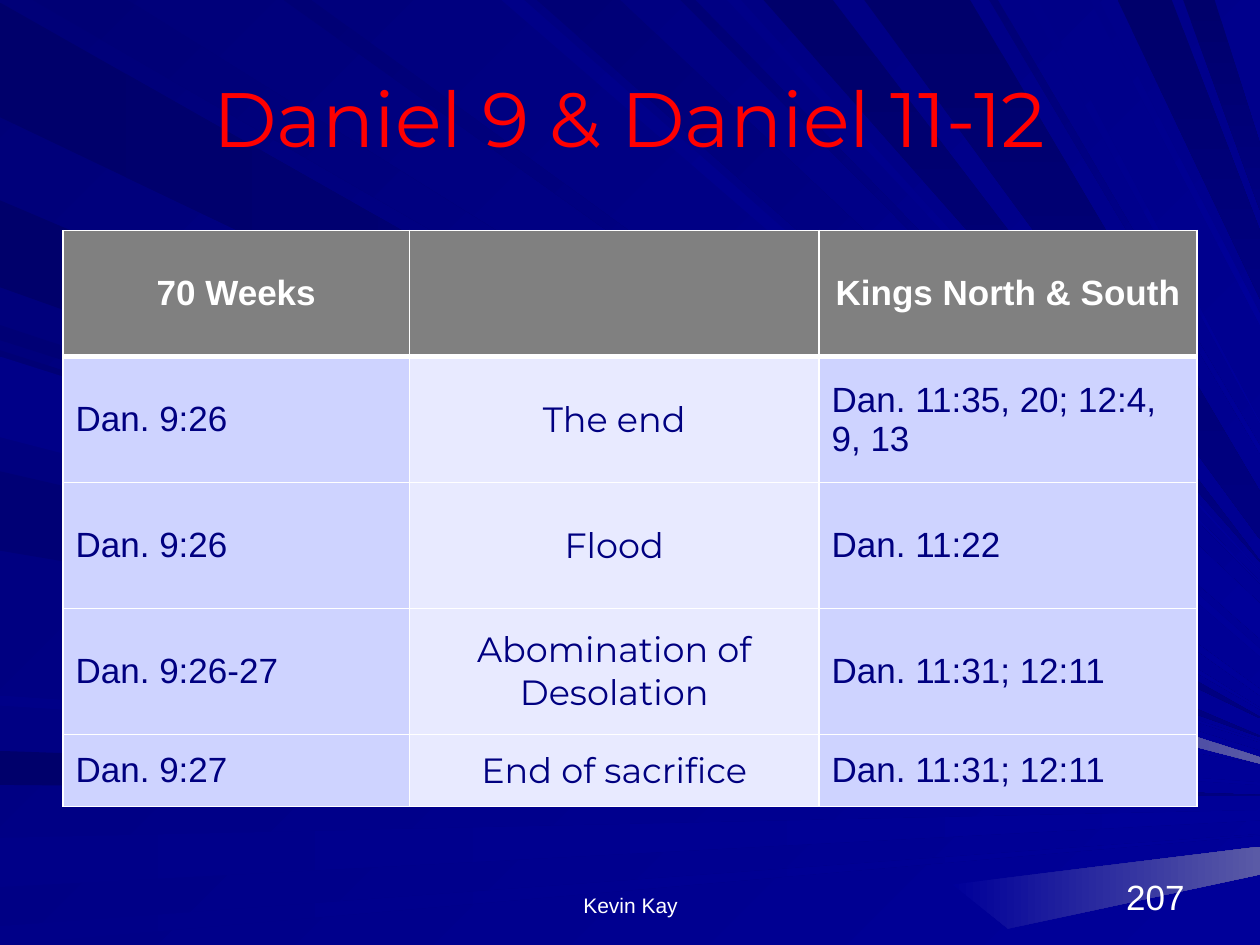
import pptx
import pptx.dml.color
import pptx.enum.text
import pptx.oxml
import pptx.oxml.ns
import pptx.util
from pptx.util import Inches

ALIGN = pptx.enum.text.PP_ALIGN
ANCHOR = pptx.enum.text.MSO_ANCHOR


def rgb(value):
    return pptx.dml.color.RGBColor.from_string(value)


def paint(fill, colors, angle):
    """Fill with a two-colour gradient turned clockwise by angle."""
    fill.gradient()
    fill.gradient_angle = (360 - angle) % 360
    for stop, color in zip(fill.gradient_stops, colors):
        stop.color.rgb = rgb(color)


deck = pptx.Presentation()
deck.slide_width, deck.slide_height = Inches(10), Inches(7.5)
page = deck.slides.add_slide(deck.slide_layouts[6])
paint(page.background.fill, ["000078", "000099"], 45)

# Light rays run from the left or top edge to the right edge, back to front:
# edge, shade, start and end along that edge, top and bottom at the right
shades = {
    "dark": ["00006B", "000080"],
    "middle": ["000075", "000099"],
    "bright": ["000088", "000099"],
    "glow": ["000099", "5A5AA6"],
}
rays = [
    ("left", "dark", 0.02, 0.93, 5.69, 5.7),
    ("top", "middle", 0.26, 1.01, 5.62, 5.63),
    ("left", "dark", 5.96, 6.23, 6.31, 6.32),
    ("left", "bright", 6.65, 7.04, 6.43, 6.51),
    ("left", "bright", 7.35, 7.5, 6.62, 6.63),
    ("left", "middle", 2.58, 2.7, 5.88, 5.89),
    ("left", "dark", 1.59, 2.28, 5.84, 5.85),
    ("top", "bright", 3.98, 4.16, 5.15, 5.21),
    ("top", "middle", 4.26, 4.92, 4.79, 5.07),
    ("top", "middle", 5.4, 5.52, 4.62, 4.63),
    ("top", "dark", 6.06, 6.61, 4.45, 4.46),
    ("top", "dark", 8.87, 9.3, 1.83, 2.37),
    ("top", "dark", 9.39, 9.64, 1.14, 1.67),
    ("left", "middle", 2.78, 3.42, 5.96, 6.02),
    ("left", "middle", 3.74, 4.37, 6.05, 6.06),
    ("left", "bright", 5.52, 5.6, 6.21, 6.23),
    ("top", "middle", 2.25, 2.47, 5.47, 5.52),
    ("top", "bright", 5.77, 5.88, 4.53, 4.54),
    ("top", "dark", 6.86, 7.7, 3.9, 4.28),
    ("top", "middle", 7.85, 7.92, 3.54, 3.6),
    ("top", "bright", 8.15, 8.24, 3.35, 3.36),
    ("top", "bright", 8.65, 8.72, 2.49, 2.58),
    ("left", "bright", 2.83, 3.47, 6.01, 6.06),
]
shapes = []
for edge, shade, start, end, top, bottom in rays:
    if edge == "left":
        corners, angle = [(0, start), (0, end)], 0
    else:
        corners, angle = [(end, 0), (start, 0)], 90 if shade == "dark" else 45
    shapes.append((shade, angle, corners + [(10, bottom), (10, top)]))
shapes.append(("glow", 0, [(6.37, 4.85), (6.33, 5.11), (10, 6.06), (10, 6.01)]))
shapes.append(("glow", 0, [(7.56, 7.02), (8, 7.37), (10, 6.94), (10, 6.72)]))

for shade, angle, corners in shapes:
    points = [(Inches(x), Inches(y)) for x, y in corners]
    outline = page.shapes.build_freeform(*points[0])
    outline.add_line_segments(points[1:], close=True)
    ray = outline.convert_to_shape()
    ray.shadow.inherit = False
    ray.line.fill.background()
    paint(ray.fill, shades[shade], angle)

# Title and footer
texts = [
    ("Daniel 9 & Daniel 11-12", (0.5, 0.3, 9, 1.25), ANCHOR.MIDDLE, ALIGN.CENTER, "FF0000",
     {"name": "Montserrat", "size": pptx.util.Pt(44)}),
    ("207", (7.17, 6.83, 2.33, 0.5), ANCHOR.BOTTOM, ALIGN.RIGHT, "FFFFFF",
     {"name": "Arial", "size": pptx.util.Pt(20)}),
    ("Kevin Kay", (3.42, 6.83, 3.17, 0.5), ANCHOR.BOTTOM, ALIGN.CENTER, "FFFFFF",
     {"name": "Arial", "size": pptx.util.Pt(12)}),
]
for text, place, anchor, align, color, formats in texts:
    box = page.shapes.add_textbox(*map(Inches, place))
    box.text_frame.word_wrap = True
    box.text_frame.vertical_anchor = anchor
    para = box.text_frame.paragraphs[0]
    para.text = text
    para.alignment = align
    para.font.color.rgb = rgb(color)
    for name, value in formats.items():
        setattr(para.font, name, value)

# Comparison table
rows = [
    ("70 Weeks", "", "Kings North & South"),
    ("Dan. 9:26", "The end", "Dan. 11:35, 20; 12:4, 9, 13"),
    ("Dan. 9:26", "Flood", "Dan. 11:22"),
    ("Dan. 9:26-27", "Abomination of Desolation", "Dan. 11:31; 12:11"),
    ("Dan. 9:27", "End of sacrifice", "Dan. 11:31; 12:11"),
]
widths = [2.75, 3.25, 3]
heights = [1, 1, 1, 1, 0.57]
table = page.shapes.add_table(
    len(rows), len(widths), Inches(0.5), Inches(1.83), Inches(sum(widths)), Inches(sum(heights))
).table
for column, width in zip(table.columns, widths):
    column.width = Inches(width)
for row, height in zip(table.rows, heights):
    row.height = Inches(height)

for row_index, row in enumerate(rows):
    for column_index, text in enumerate(row):
        header, middle = row_index == 0, column_index == 1
        cell = table.cell(row_index, column_index)
        cell.vertical_anchor = ANCHOR.MIDDLE
        para = cell.text_frame.paragraphs[0]
        para.text = text
        para.alignment = ALIGN.CENTER if header or middle else ALIGN.LEFT
        formats = {
            "name": "Montserrat" if middle and not header else "Arial",
            "size": pptx.util.Pt(20),
            "bold": header,
        }
        for name, value in formats.items():
            setattr(para.font, name, value)
        para.font.color.rgb = rgb("FFFFFF" if header else "000080")

        thick_side = {0: "B", 1: "T"}.get(row_index)
        for side in "LRTB":
            weight = pptx.util.Pt(3 if side == thick_side else 1)
            cell._tc.get_or_add_tcPr().append(pptx.oxml.parse_xml(
                f'<a:ln{side} {pptx.oxml.ns.nsdecls("a")} w="{weight}"><a:solidFill>'
                f'<a:srgbClr val="FFFFFF"/></a:solidFill></a:ln{side}>'
            ))
        cell.fill.solid()
        cell.fill.fore_color.rgb = rgb("808080" if header else "E8EAFF" if middle else "CED3FF")

deck.save("out.pptx")
